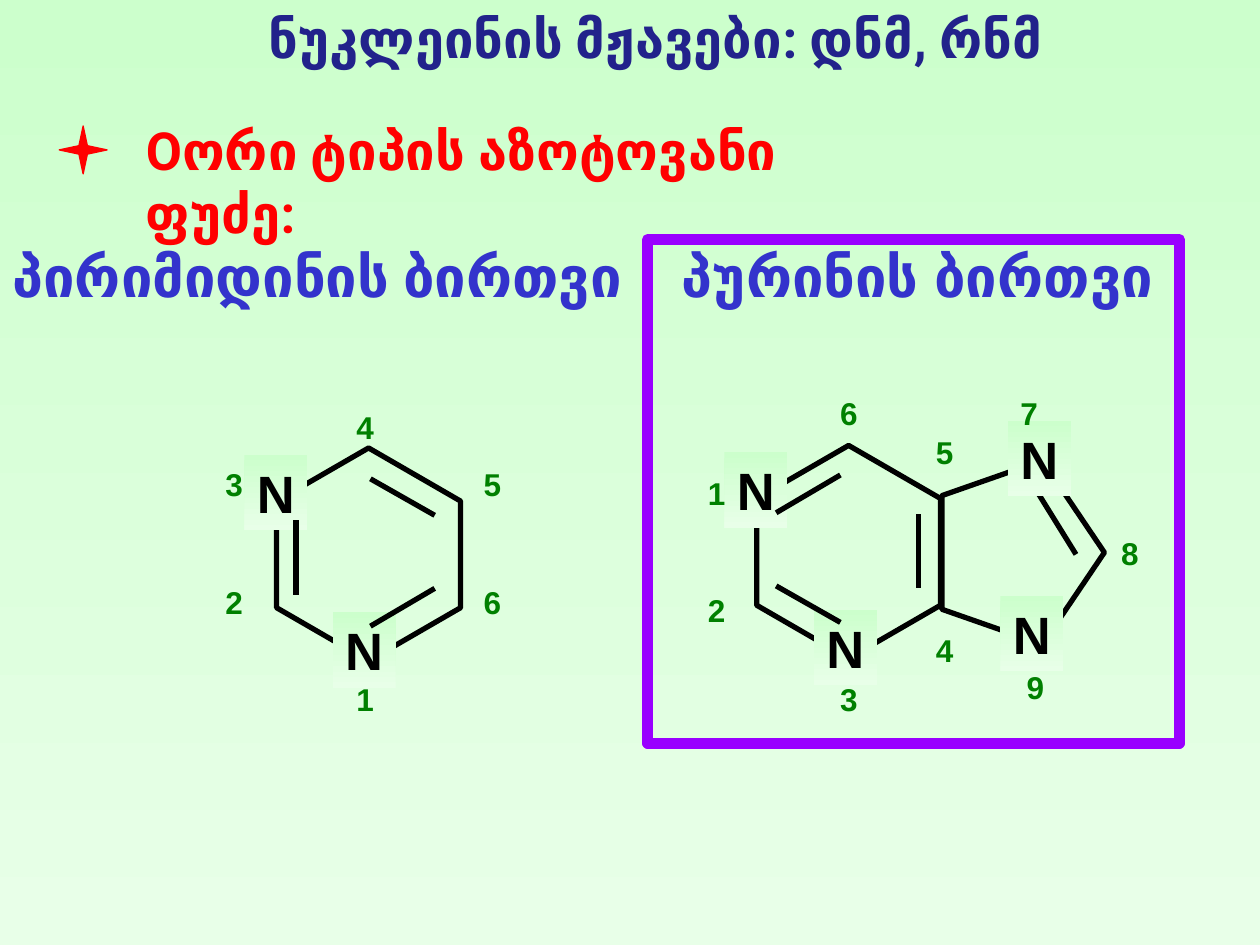
from lxml import etree
from pptx import Presentation
from pptx import util as u
from pptx.dml.color import RGBColor
from pptx.enum import shapes, text
from pptx.oxml.ns import qn

COLUMNS, ROWS = 100, 75
BACKGROUND = ("CCFFCC", "E8FFE8")
BLACK, RED, BLUE, NAVY = "000000", "FF0000", "3333CC", "22228B"
GREEN, PURPLE = "008000", "9900FF"
RING_SIZE = (16.9, 14.6)
ATOM_SIZE = (5, 6)
NUMBER_SIZE = (3.4, 4)


def color(value):
    return RGBColor.from_string(value)


def write(frame, content, font="Arial", size=30, fill=BLACK, center=False, wrap=True):
    frame.word_wrap = wrap
    frame.auto_size = text.MSO_AUTO_SIZE.SHAPE_TO_FIT_TEXT
    frame.vertical_anchor = text.MSO_ANCHOR.TOP
    paragraph = frame.paragraphs[0]
    paragraph.alignment = text.PP_ALIGN.CENTER if center else text.PP_ALIGN.LEFT
    run = paragraph.add_run()
    run.text = content
    run.font.name, run.font.size, run.font.bold = font, u.Pt(size), True
    run.font.color.rgb = color(fill)


def shade(fill):
    """Fill with the background gradient, running from top to bottom."""
    fill.gradient()
    fill.gradient_angle = 270
    for stop, position, value in zip(fill.gradient_stops, (0, 1), BACKGROUND):
        stop.position = position
        stop.color.rgb = color(value)


class Board:
    """Draws on one slide; places and sizes are in columns and rows of the grid."""

    def __init__(self, presentation):
        self.column = presentation.slide_width / COLUMNS
        self.row = presentation.slide_height / ROWS
        self.slide = presentation.slides.add_slide(presentation.slide_layouts[6])
        self.target = self.slide.shapes
        shade(self.slide.background.fill)

    def place(self, *values):
        units = (self.column, self.row) * 2
        return [round(value * unit) for value, unit in zip(values, units)]

    def start_group(self):
        self.target = self.slide.shapes.add_group_shape().shapes

    def end_group(self):
        self.target = self.slide.shapes

    def label(self, box, content, **style):
        write(self.target.add_textbox(*self.place(*box)).text_frame, content, **style)

    def outline(self, kind, box, line=BLACK, weight=3, fill=None, rotation=0, adjust=()):
        shape = self.target.add_shape(kind, *self.place(*box))
        shape.shadow.inherit = False
        shape.rotation = rotation
        for index, value in enumerate(adjust):
            shape.adjustments[index] = value
        if fill:
            shape.fill.solid()
            shape.fill.fore_color.rgb = color(fill)
        else:
            shape.fill.background()
        shape.line.color.rgb = color(line)
        shape.line.width = u.Pt(weight)

    def hexagon(self, left, top):
        self.outline(shapes.MSO_SHAPE.HEXAGON, (left, top, *RING_SIZE),
                     rotation=90, adjust=(0.289, 1.155))

    def nitrogens(self, *places):
        """Set each N on a patch of background that hides the ring's corner."""
        for place in places:
            patch = self.target.add_shape(
                shapes.MSO_SHAPE.RECTANGLE, *self.place(*place, *ATOM_SIZE))
            patch.shadow.inherit = False
            shade(patch.fill)
            patch.line.fill.background()
            write(patch.text_frame, "N", wrap=False)

    def bonds(self, *ends):
        for end in ends:
            bond = self.target.add_connector(
                shapes.MSO_CONNECTOR.STRAIGHT, *self.place(*end))
            bond.line.color.rgb = color(BLACK)
            bond.line.width = u.Pt(3)
            etree.SubElement(bond._element.spPr, qn("a:effectLst"))

    def numbers(self, *places):
        """Number the ring's corners from 1, in the order given."""
        for number, place in enumerate(places, 1):
            self.label((*place, *NUMBER_SIZE), str(number), size=18, fill=GREEN, wrap=False)


def draw_pyrimidine(board):
    board.start_group()
    board.hexagon(20.8, 36.7)
    board.nitrogens((19.4, 36.1), (26.4, 48.6))
    board.bonds((29.4, 49.7, 34.5, 46.7), (34.5, 40.9, 29.4, 38),
                (23.5, 41.3, 23.5, 47.2))
    board.numbers((27.3, 53.5), (16.9, 45.8), (16.9, 36.4),
                  (27.3, 31.9), (37.4, 36.4), (37.4, 45.8))
    board.end_group()


def draw_purine(board):
    board.hexagon(58.9, 36.5)
    board.nitrogens((57.5, 35.9), (64.6, 48.4))
    board.outline(shapes.MSO_SHAPE.REGULAR_PENTAGON, (73.9, 37.4, 14.6, 12.9), rotation=90)
    board.bonds((72.9, 40.8, 72.9, 46.7), (66.7, 49.4, 61.6, 46.5),
                (61.6, 40.7, 66.7, 37.7), (82.3, 39, 85.4, 44))
    board.nitrogens((80, 33.4), (79.4, 47.3))
    board.numbers((55.2, 37.1), (55.2, 46.4), (65.7, 53.5),
                  (73.3, 49.6), (73.3, 33.9), (65.7, 30.8),
                  (80, 30.8), (88, 41.9), (80.5, 52.5))


def main():
    presentation = Presentation()
    presentation.slide_width, presentation.slide_height = u.Inches(10), u.Inches(7.5)
    board = Board(presentation)
    board.outline(shapes.MSO_SHAPE.RECTANGLE, (51.4, 19, 42.2, 40), line=PURPLE, weight=6)
    board.label((10.6, 8.9, 63.9, 6.1), "Oორი ტიპის აზოტოვანი ფუძე:",
                font="Roboto", fill=RED)
    board.label((0, 18.7, 57.3, 6.4), "პირიმიდინის ბირთვი",
                font="Roboto", size=32, fill=BLUE)
    board.label((51.2, 18.7, 44.5, 6.4), "პურინის ბირთვი ", size=32, fill=BLUE, center=True)
    board.outline(shapes.MSO_SHAPE.STAR_4_POINT, (4.7, 10, 3.8, 3.8),
                  line=RED, weight=0.75, fill=RED, adjust=(0.125,))
    draw_pyrimidine(board)
    draw_purine(board)
    board.label((13.8, 0, 76.5, 11.1), "ნუკლეინის მჟავები: დნმ, რნმ",
                font="Roboto", fill=NAVY, center=True)
    presentation.save("out.pptx")


if __name__ == "__main__":
    main()
